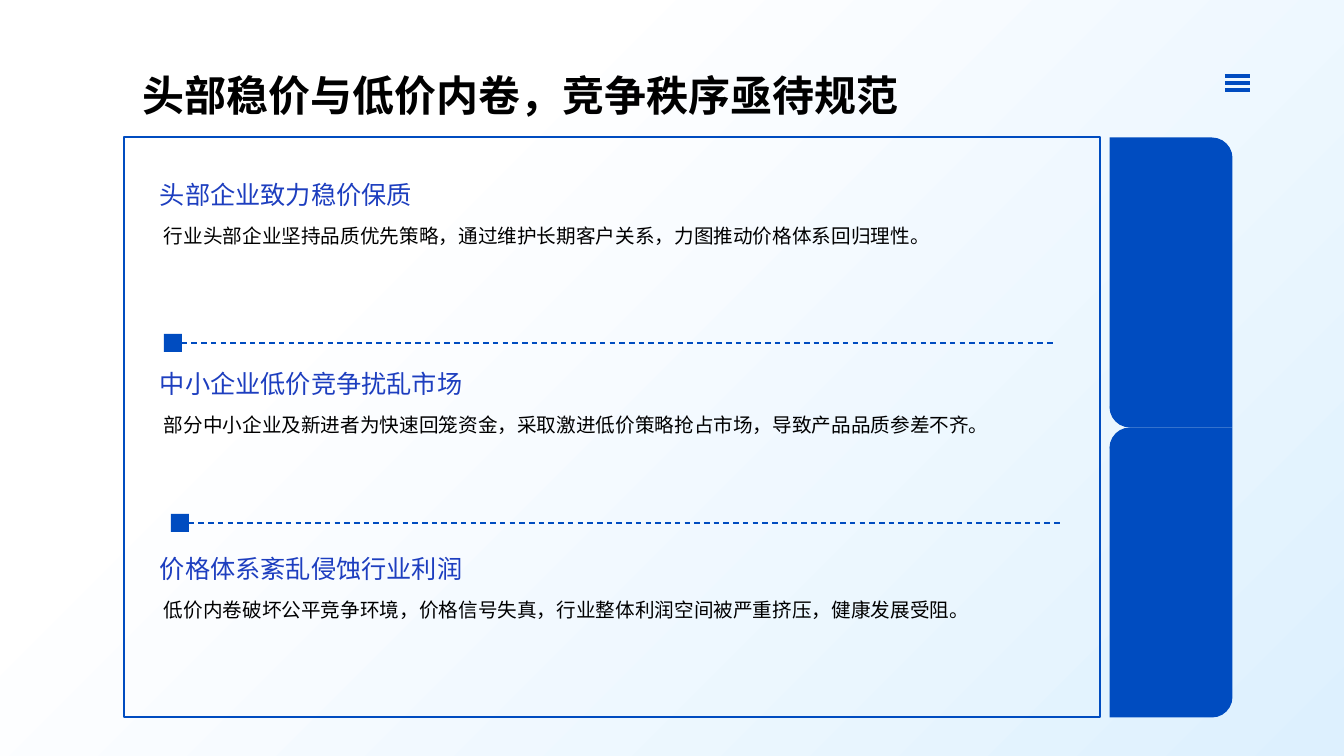
from dataclasses import dataclass

from lxml.etree import SubElement
from pptx import Presentation
from pptx.dml.color import RGBColor
from pptx.enum.dml import MSO_LINE
from pptx.enum.shapes import MSO_CONNECTOR, MSO_SHAPE
from pptx.enum.text import MSO_ANCHOR, MSO_AUTO_SIZE, PP_ALIGN
from pptx.oxml.ns import qn
from pptx.util import Emu, Pt

EMU_PER_PX = 12192000 / 1344
FONT = "Karla"
COLORS = {
    "blue": "004CC0",
    "heading": "1D3EBF",
    "text": "000000",
    "bg_start": "FFFFFF",
    "bg_end": "DDF0FE",
}


@dataclass
class Box:
    left: int
    top: int
    width: int
    height: int


@dataclass
class TextStyle:
    size: int
    color: str
    bold: bool = False
    align: PP_ALIGN | None = None
    anchor: MSO_ANCHOR = MSO_ANCHOR.TOP
    spacing: float | None = None


@dataclass
class Section:
    top: int
    heading: str
    body: str


@dataclass
class Divider:
    left: int
    top: int


@dataclass
class Panel:
    top: int
    rotation: int
    flipped: bool


TITLE_STYLE = TextStyle(30, "text", bold=True)
HEADING_STYLE = TextStyle(18, "heading", align=PP_ALIGN.JUSTIFY, anchor=MSO_ANCHOR.MIDDLE)
BODY_STYLE = TextStyle(14, "text", align=PP_ALIGN.JUSTIFY, spacing=1.3)

SECTIONS = [
    Section(174, "头部企业致力稳价保质",
            "行业头部企业坚持品质优先策略，通过维护长期客户关系，力图推动价格体系回归理性。"),
    Section(363, "中小企业低价竞争扰乱市场",
            "部分中小企业及新进者为快速回笼资金，采取激进低价策略抢占市场，导致产品品质参差不齐。"),
    Section(548, "价格体系紊乱侵蚀行业利润",
            "低价内卷破坏公平竞争环境，价格信号失真，行业整体利润空间被严重挤压，健康发展受阻。"),
]
DIVIDERS = [Divider(164, 334), Divider(171, 514)]
PANELS = [Panel(221, 270, False), Panel(511, 90, True)]


def px(n: int) -> Emu:
    return Emu(round(n * EMU_PER_PX))


def rgb(name: str) -> RGBColor:
    return RGBColor.from_string(COLORS[name])


def place(box: Box) -> tuple[Emu, Emu, Emu, Emu]:
    return px(box.left), px(box.top), px(box.width), px(box.height)


def add_filled(slide, kind: MSO_SHAPE, box: Box):
    sp = slide.shapes.add_shape(kind, *place(box))
    sp.shadow.inherit = False
    sp.fill.solid()
    sp.fill.fore_color.rgb = rgb("blue")
    sp.line.fill.background()
    return sp


def add_frame(slide, box: Box) -> None:
    sp = slide.shapes.add_shape(MSO_SHAPE.RECTANGLE, *place(box))
    sp.shadow.inherit = False
    sp.fill.background()
    sp.line.color.rgb = rgb("blue")
    sp.line.width = Pt(1.5)


def add_rule(slide, left: int, right: int, y: int, weight: float, dashed: bool = False) -> None:
    line = slide.shapes.add_connector(MSO_CONNECTOR.STRAIGHT, px(left), px(y), px(right), px(y))
    line.line.color.rgb = rgb("blue")
    line.line.width = Pt(weight)
    if dashed:
        line.line.dash_style = MSO_LINE.DASH
    SubElement(line._element.spPr, qn("a:effectLst"))


def add_text(slide, box: Box, text: str, style: TextStyle) -> None:
    tf = slide.shapes.add_textbox(*place(box)).text_frame
    tf.word_wrap = True
    tf.auto_size = MSO_AUTO_SIZE.SHAPE_TO_FIT_TEXT
    tf.vertical_anchor = style.anchor
    tf.text = text
    p = tf.paragraphs[0]
    p.alignment = style.align
    p.line_spacing = style.spacing
    font = p.runs[0].font
    font.name = FONT
    font.size = Pt(style.size)
    font.bold = style.bold
    font.color.rgb = rgb(style.color)


def set_background(slide) -> None:
    fill = slide.background.fill
    fill.gradient()
    fill.gradient_angle = 315
    stops = [(0.28, "bg_start"), (1.0, "bg_end")]
    for stop, (position, color) in zip(fill.gradient_stops, stops):
        stop.position = position
        stop.color.rgb = rgb(color)


def main() -> None:
    prs = Presentation()
    prs.slide_width, prs.slide_height = px(1344), px(756)
    slide = prs.slides.add_slide(prs.slide_layouts[6])
    set_background(slide)

    # Side panels
    for panel in PANELS:
        sp = add_filled(slide, MSO_SHAPE.ROUND_2_DIAG_RECTANGLE, Box(1026, panel.top, 290, 123))
        sp.adjustments[0] = 0.167
        sp.rotation = panel.rotation
        if panel.flipped:
            sp._element.spPr.find(qn("a:xfrm")).set("flipV", "1")

    # Content frame and dividers
    add_frame(slide, Box(124, 137, 976, 580))
    for d in DIVIDERS:
        add_filled(slide, MSO_SHAPE.RECTANGLE, Box(d.left, d.top, 18, 18))
        add_rule(slide, d.left + 8, d.left + 889, d.top + 9, 1, dashed=True)

    # Title and menu icon
    add_text(slide, Box(133, 65, 1119, 60), "头部稳价与低价内卷，竞争秩序亟待规范", TITLE_STYLE)
    for i in range(3):
        add_rule(slide, 1225, 1250, 76 + 7 * i, 2.5)

    # Sections
    for s in SECTIONS:
        add_text(slide, Box(150, s.top, 943, 40), s.heading, HEADING_STYLE)
        add_text(slide, Box(154, s.top + 38, 903, 42), s.body, BODY_STYLE)

    prs.save("out.pptx")


if __name__ == "__main__":
    main()
